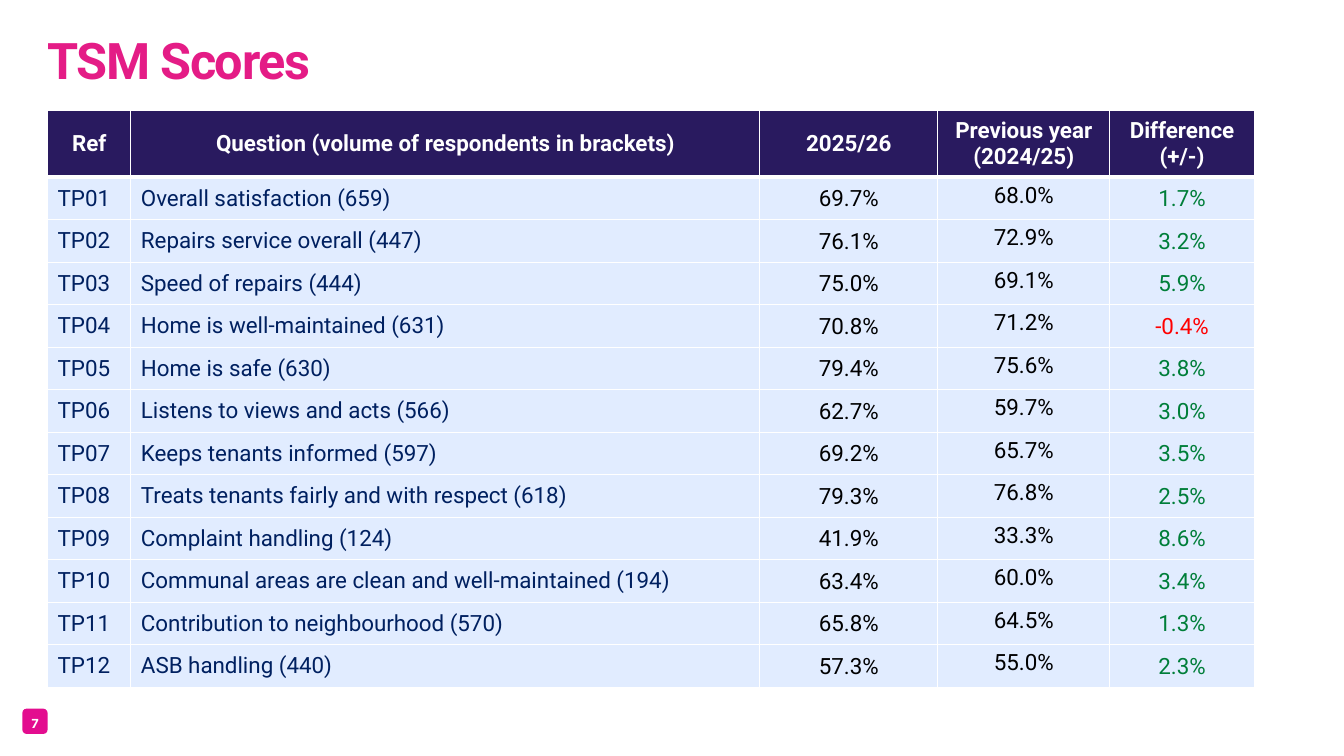
from dataclasses import dataclass
from typing import NamedTuple

from lxml import etree
from pptx import Presentation
from pptx.dml.color import RGBColor
from pptx.enum.shapes import MSO_SHAPE
from pptx.enum.text import MSO_ANCHOR, MSO_AUTO_SIZE, PP_ALIGN
from pptx.oxml.ns import qn
from pptx.table import _Cell
from pptx.text.text import TextFrame
from pptx.util import Pt

ROUNDED = MSO_SHAPE.ROUNDED_RECTANGLE
LEFT = PP_ALIGN.LEFT
CENTER = PP_ALIGN.CENTER
TOP = MSO_ANCHOR.TOP
MIDDLE = MSO_ANCHOR.MIDDLE
BOTTOM = MSO_ANCHOR.BOTTOM
GROW = MSO_AUTO_SIZE.SHAPE_TO_FIT_TEXT


@dataclass(frozen=True)
class Theme:
    pink: str = "E41C86"
    badge: str = "E30D8F"
    header: str = "291A5F"
    body: str = "6AA2FF"
    body_opacity: int = 20
    navy: str = "002060"
    black: str = "000000"
    white: str = "FFFFFF"
    rise: str = "007E39"
    fall: str = "FF0000"
    font: str = "Roboto"
    badge_font: str = "Karla"
    title_size: float = 36
    table_size: float = 16
    badge_size: float = 10


THEME = Theme()


class Measure(NamedTuple):
    ref: str
    question: str
    current: str
    previous: str
    difference: str


@dataclass(frozen=True)
class TextStyle:
    size: float
    color: str
    bold: bool = False
    align: PP_ALIGN = LEFT
    font: str = THEME.font
    line_spacing: float | None = None
    tracking: float = 0


@dataclass(frozen=True)
class Column:
    heading: str
    width: float
    style: TextStyle
    tight: bool = False


REF_STYLE = TextStyle(THEME.table_size, THEME.navy)
SCORE_STYLE = TextStyle(THEME.table_size, THEME.black, align=CENTER)
PREVIOUS_STYLE = TextStyle(THEME.table_size, THEME.black, align=CENTER, line_spacing=14.2)
RISE_STYLE = TextStyle(THEME.table_size, THEME.rise, align=CENTER)
FALL_STYLE = TextStyle(THEME.table_size, THEME.fall, align=CENTER)
HEADING_STYLE = TextStyle(THEME.table_size, THEME.white, bold=True, align=CENTER)
TITLE_STYLE = TextStyle(THEME.title_size, THEME.pink, bold=True, line_spacing=60, tracking=-1)
BADGE_STYLE = TextStyle(THEME.badge_size, THEME.white, bold=True, align=CENTER,
                        font=THEME.badge_font, line_spacing=12)

COLUMNS = (
    Column("Ref", 59.5, REF_STYLE),
    Column("Question (volume of respondents in brackets)", 449.3, REF_STYLE),
    Column("2025/26", 127.1, SCORE_STYLE, tight=True),
    Column("Previous year (2024/25)", 122.9, PREVIOUS_STYLE),
    Column("Difference (+/-)", 103.2, RISE_STYLE, tight=True),
)

MEASURES = (
    Measure("TP01", "Overall satisfaction (659)", "69.7%", "68.0%", "1.7%"),
    Measure("TP02", "Repairs service overall (447)", "76.1%", "72.9%", "3.2%"),
    Measure("TP03", "Speed of repairs (444)", "75.0%", "69.1%", "5.9%"),
    Measure("TP04", "Home is well-maintained (631)", "70.8%", "71.2%", "-0.4%"),
    Measure("TP05", "Home is safe (630)", "79.4%", "75.6%", "3.8%"),
    Measure("TP06", "Listens to views and acts (566)", "62.7%", "59.7%", "3.0%"),
    Measure("TP07", "Keeps tenants informed (597)", "69.2%", "65.7%", "3.5%"),
    Measure("TP08", "Treats tenants fairly and with respect (618)", "79.3%", "76.8%", "2.5%"),
    Measure("TP09", "Complaint handling (124)", "41.9%", "33.3%", "8.6%"),
    Measure("TP10", "Communal areas are clean and well-maintained (194)", "63.4%", "60.0%", "3.4%"),
    Measure("TP11", "Contribution to neighbourhood (570)", "65.8%", "64.5%", "1.3%"),
    Measure("TP12", "ASB handling (440)", "57.3%", "55.0%", "2.3%"),
)

HEADER_HEIGHT = 47.5
ROW_HEIGHT = 30.36


def write(frame: TextFrame, text: str, style: TextStyle) -> None:
    paragraph = frame.paragraphs[0]
    paragraph.alignment = style.align
    if style.line_spacing:
        paragraph.line_spacing = Pt(style.line_spacing)
    run = paragraph.add_run()
    run.text = text
    run.font.name = style.font
    run.font.size = Pt(style.size)
    run.font.bold = style.bold
    run.font.color.rgb = RGBColor.from_string(style.color)
    if style.tracking:
        run._r.get_or_add_rPr().set("spc", str(int(style.tracking * 100)))


def add_label(shapes, left: float, top: float, width: float, height: float,
              text: str, style: TextStyle, anchor: MSO_ANCHOR) -> None:
    frame = shapes.add_textbox(Pt(left), Pt(top), Pt(width), Pt(height)).text_frame
    frame.margin_left = frame.margin_right = frame.margin_top = frame.margin_bottom = 0
    frame.word_wrap = True
    frame.auto_size = GROW
    frame.vertical_anchor = anchor
    write(frame, text, style)


def paint(cell: _Cell, color: str, opacity: int, bottom_border: float) -> None:
    cell.fill.solid()
    cell.fill.fore_color.rgb = RGBColor.from_string(color)
    properties = cell._tc.get_or_add_tcPr()
    if opacity < 100:
        swatch = properties.find(f".//{qn('a:srgbClr')}")
        etree.SubElement(swatch, qn("a:alpha")).set("val", str(opacity * 1000))
    borders = (("a:lnL", 1), ("a:lnR", 1), ("a:lnT", 1), ("a:lnB", bottom_border))
    for position, (side, weight) in enumerate(borders):
        line = etree.Element(qn(side), w=str(Pt(weight)))
        fill = etree.SubElement(line, qn("a:solidFill"))
        etree.SubElement(fill, qn("a:srgbClr")).set("val", THEME.white)
        properties.insert(position, line)


def fill_cell(cell: _Cell, text: str, style: TextStyle, color: str,
              opacity: int = 100, bottom_border: float = 1, tight: bool = False) -> None:
    cell.vertical_anchor = MIDDLE
    if tight:
        cell.margin_left = cell.margin_right = cell.margin_top = Pt(0.75)
        cell.margin_bottom = 0
    write(cell.text_frame, text, style)
    paint(cell, color, opacity, bottom_border)


def add_scores(shapes, left: float, top: float) -> None:
    width = sum(column.width for column in COLUMNS)
    height = HEADER_HEIGHT + ROW_HEIGHT * len(MEASURES)
    scores = shapes.add_table(len(MEASURES) + 1, len(COLUMNS),
                              Pt(left), Pt(top), Pt(width), Pt(height)).table
    scores.first_row = False
    scores.horz_banding = False
    scores.rows[0].height = Pt(HEADER_HEIGHT)
    for index, column in enumerate(COLUMNS):
        scores.columns[index].width = Pt(column.width)
        fill_cell(scores.cell(0, index), column.heading, HEADING_STYLE,
                  THEME.header, bottom_border=3)
    for row, measure in enumerate(MEASURES, start=1):
        scores.rows[row].height = Pt(ROW_HEIGHT)
        for index, (column, text) in enumerate(zip(COLUMNS, measure)):
            style = FALL_STYLE if text.startswith("-") else column.style
            fill_cell(scores.cell(row, index), text, style, THEME.body,
                      opacity=THEME.body_opacity, tight=column.tight)


def add_page_badge(shapes, number: str) -> None:
    badge = shapes.add_group_shape().shapes
    tile = badge.add_shape(ROUNDED, Pt(16), Pt(506.2), Pt(18), Pt(18))
    tile.shadow.inherit = False
    tile.fill.solid()
    tile.fill.fore_color.rgb = RGBColor.from_string(THEME.badge)
    tile.line.fill.background()
    add_label(badge, 16, 510.4, 18, 9.4, number, BADGE_STYLE, TOP)


def main() -> None:
    deck = Presentation()
    deck.slide_width = Pt(960)
    deck.slide_height = Pt(540)
    shapes = deck.slides.add_slide(deck.slide_layouts[6]).shapes
    add_label(shapes, 34, 7.9, 533.5, 56.2, "TSM Scores", TITLE_STYLE, BOTTOM)
    add_page_badge(shapes, "7")
    add_scores(shapes, 34, 79.2)
    deck.save("out.pptx")


if __name__ == "__main__":
    main()
